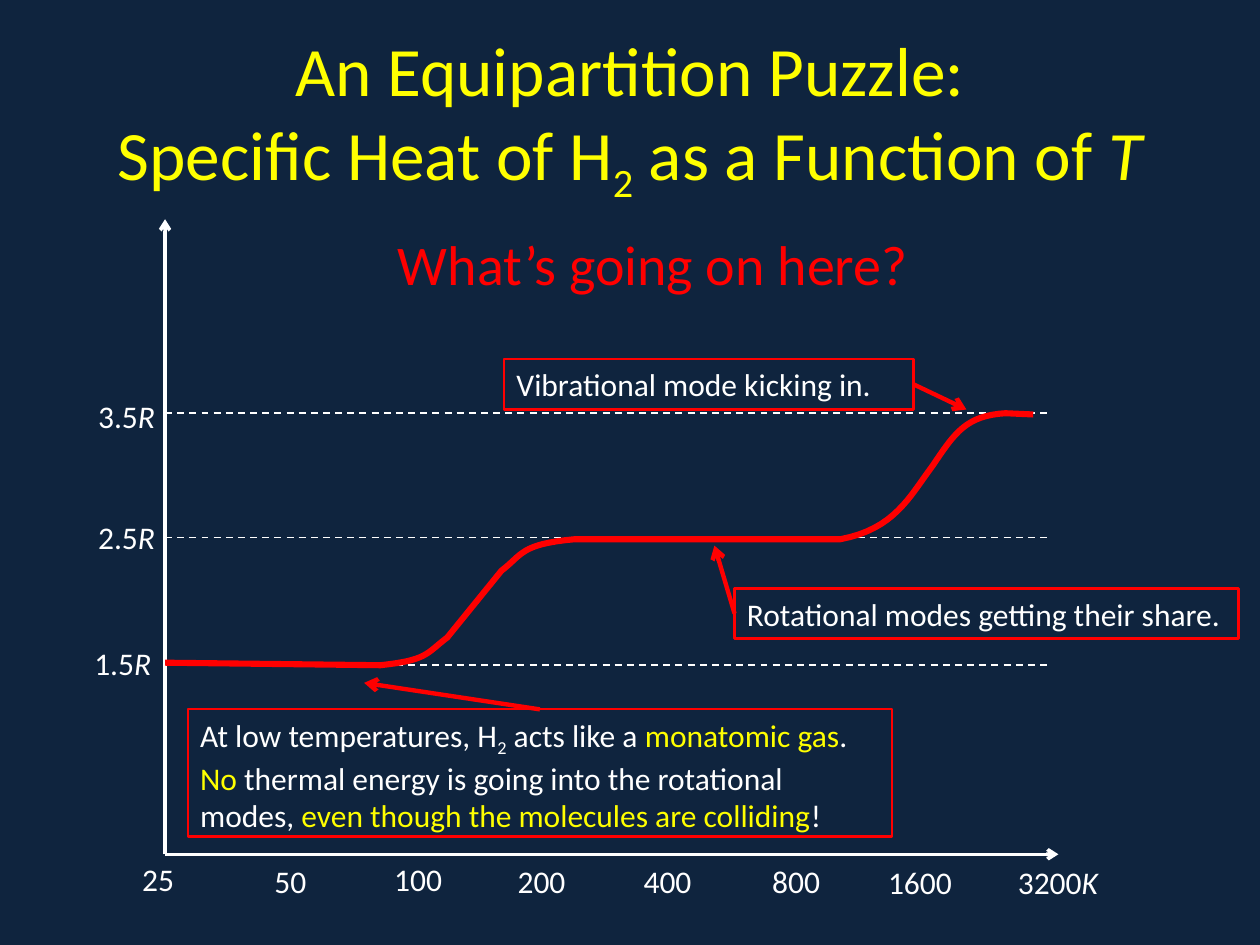
from dataclasses import dataclass

from lxml.etree import SubElement
from pptx import Presentation
from pptx.dml.color import RGBColor
from pptx.enum.dml import MSO_LINE
from pptx.enum.shapes import MSO_CONNECTOR, MSO_SHAPE
from pptx.enum.text import MSO_ANCHOR, PP_ALIGN
from pptx.oxml.ns import qn
from pptx.util import Inches, Pt

GRID = 0.25  # inches per column and per row: the slide is 40 by 30


@dataclass(frozen=True)
class Theme:
    font: str = "Calibri"
    background: RGBColor = RGBColor(0x0F, 0x24, 0x3E)
    text: RGBColor = RGBColor(0xFF, 0xFF, 0xFF)
    highlight: RGBColor = RGBColor(0xFF, 0xFF, 0x00)
    accent: RGBColor = RGBColor(0xFF, 0x00, 0x00)
    title_size: float = 39.6
    question_size: float = 32
    body_size: float = 18


@dataclass(frozen=True)
class Box:
    column: float
    row: float
    columns: float
    rows: float

    def point(self, column, row):
        return Inches((self.column + column) * GRID), Inches((self.row + row) * GRID)

    def inner(self, column, row, columns, rows):
        return Box(self.column + column, self.row + row, columns, rows)

    def frame(self):
        return (*self.point(0, 0), Inches(self.columns * GRID), Inches(self.rows * GRID))


THEME = Theme()
ITALIC = {"italic": True}
SUBSCRIPT = {"subscript": True}
HIGHLIGHT = {"color": THEME.highlight}


def write_runs(shape, runs, size, color=THEME.text, **frame_format):
    """Fill a shape with (text, format) runs; a newline becomes a line break."""
    text_frame = shape.text_frame
    frame_values = {"word_wrap": True, "vertical_anchor": MSO_ANCHOR.TOP, **frame_format}
    alignment = frame_values.pop("alignment", PP_ALIGN.LEFT)
    for name, value in frame_values.items():
        setattr(text_frame, name, value)
    paragraph = text_frame.paragraphs[0]
    paragraph.alignment = alignment
    for text, run_format in runs:
        for index, line in enumerate(text.split("\n")):
            if index:
                paragraph.add_line_break()
            run = paragraph.add_run()
            run.text = line
            font_values = {"name": THEME.font, "size": Pt(size),
                           "italic": run_format.get("italic", False)}
            for name, value in font_values.items():
                setattr(run.font, name, value)
            run.font.color.rgb = run_format.get("color", color)
            if run_format.get("subscript"):
                run.font._element.set("baseline", "-25000")


def add_text(slide, box, runs, size, **text_format):
    shape = slide.shapes.add_textbox(*box.frame())
    write_runs(shape, runs, size, **text_format)


def add_line(slide, start, end, color, width, dashed=False, arrow=False):
    connector = slide.shapes.add_connector(MSO_CONNECTOR.STRAIGHT, *start, *end)
    connector.line.color.rgb = color
    connector.line.width = Pt(width)
    if dashed:
        connector.line.dash_style = MSO_LINE.DASH
    if arrow:
        SubElement(connector.line._get_or_add_ln(), qn("a:tailEnd"), type="arrow")
    SubElement(connector._element.spPr, qn("a:effectLst"))
    return connector


def bezier(start, first, second, end, steps=16):
    """Points along a cubic curve, without its start."""
    for step in range(1, steps + 1):
        t = step / steps
        weights = ((1 - t) ** 3, 3 * t * (1 - t) ** 2, 3 * t ** 2 * (1 - t), t ** 3)
        yield tuple(sum(weight * point[axis] for weight, point
                        in zip(weights, (start, first, second, end))) for axis in (0, 1))


def add_heading(slide, box):
    # Two-line title, with the question beneath it
    title = [("An Equipartition Puzzle:\nSpecific Heat of H", {}), ("2", SUBSCRIPT),
             (" as a Function of ", {}), ("T", ITALIC)]
    add_text(slide, box.inner(0, 0, box.columns, 5), title, THEME.title_size,
             color=THEME.highlight, alignment=PP_ALIGN.CENTER,
             vertical_anchor=MSO_ANCHOR.MIDDLE)
    add_text(slide, box.inner(10.24, 5.88, 18, 2.6), [("What’s going on here?", {})],
             THEME.question_size, color=THEME.accent)


def add_axes(slide, box):
    # Axes
    origin = box.point(0, box.rows)
    for end in (box.point(box.columns, box.rows), box.point(0, 0)):
        add_line(slide, origin, end, THEME.text, 2, arrow=True)

    # Heat levels: number, row of the dashed line, place of the label
    levels = (("1.5", 14.16, -2.64, 13.28), ("2.5", 10.1, -2.52, 9.28),
              ("3.5", 6.16, -2.52, 5.44))
    for number, row, label_column, label_row in levels:
        add_line(slide, box.point(0, row), box.point(28, row), THEME.text, 1, dashed=True)
        add_text(slide, box.inner(label_column, label_row, 3.68, 1.6),
                 [(number, {}), ("R", ITALIC)], THEME.body_size)

    # Temperatures double from one label to the next
    label_columns = (-1.12, 3.08, 6.88, 10.8, 14.8, 18.88, 22.56, 26.68)
    label_drops = (0, 0.04, 0, 0.04, 0.04, 0.04, 0.08, 0.08)
    for index, (column, drop) in enumerate(zip(label_columns, label_drops)):
        runs = [(str(25 * 2 ** index), {})]
        if index == len(label_columns) - 1:
            runs.append(("K", ITALIC))
        add_text(slide, box.inner(column, box.rows + drop, 4, 1.6), runs, THEME.body_size)


def add_heat_curve(slide, box):
    # One point is a straight piece, three are a cubic piece
    pieces = (
        [(6.84, 14.16)],
        [(8.32, 14), (8.28, 13.8), (8.96, 13.28)],
        [(10.68, 11.16)],
        [(11.36, 10.64), (11.28, 10.32), (13, 10.16)],
        [(21.44, 10.16)],
        [(23.16, 9.84), (23.64, 8.8), (24.36, 7.84)],
        [(25.08, 6.76), (25.44, 6.24), (26.68, 6.16)],
        [(27.56, 6.2)],
    )
    points = [(0, 14.08)]
    for piece in pieces:
        points.extend(piece if len(piece) == 1 else bezier(points[-1], *piece))
    vertices = [box.point(*point) for point in points]
    builder = slide.shapes.build_freeform(*vertices[0], scale=1.0)
    builder.add_line_segments(vertices[1:], close=False)
    curve = builder.convert_to_shape()
    curve.shadow.inherit = False
    curve.fill.background()
    curve.line.color.rgb = THEME.accent
    curve.line.width = Pt(3.5)


def add_callout(slide, box, runs, line_width, side, target):
    # Outlined note with an arrow from the middle of one side
    note = slide.shapes.add_shape(MSO_SHAPE.RECTANGLE, *box.frame())
    note.shadow.inherit = False
    note.fill.background()
    note.line.color.rgb = THEME.accent
    note.line.width = Pt(line_width)
    write_runs(note, runs, THEME.body_size)
    tip = box.point(*target)
    arrow = add_line(slide, box.point(0, 0), tip, THEME.accent, 2.5, arrow=True)
    arrow.begin_connect(note, side)


def main():
    presentation = Presentation()
    presentation.slide_width, presentation.slide_height = Inches(10), Inches(7.5)
    slide = presentation.slides.add_slide(presentation.slide_layouts[6])
    slide.background.fill.solid()
    slide.background.fill.fore_color.rgb = THEME.background

    plot = Box(5.24, 6.96, 28.36, 20.16)
    add_heading(slide, Box(2, 1.2, 36, 8.4))
    add_axes(slide, plot)
    add_heat_curve(slide, plot)

    # Notes: arrow targets are relative to each note
    low_temperature = [
        ("At low temperatures, H", {}), ("2", SUBSCRIPT), (" acts like a ", {}),
        ("monatomic gas", HIGHLIGHT), (". ", {}), ("No", HIGHLIGHT),
        (" thermal energy is going into the rotational modes, ", {}),
        ("even though the molecules are colliding", HIGHLIGHT), ("!", {})]
    rotation = [("Rotational modes getting their share.", {})]
    vibration = [("Vibrational mode kicking in.", {})]
    add_callout(slide, Box(5.96, 22.52, 22.36, 4.04), low_temperature, 1.25, 0, (5.6, -0.84))
    add_callout(slide, Box(23.32, 18.68, 16, 1.6), rotation, 1.5, 1, (-0.64, -1.36))
    add_callout(slide, Box(16, 11.4, 13, 1.6), vibration, 1.5, 3, (14.68, 1.6))
    presentation.save("out.pptx")


if __name__ == "__main__":
    main()
